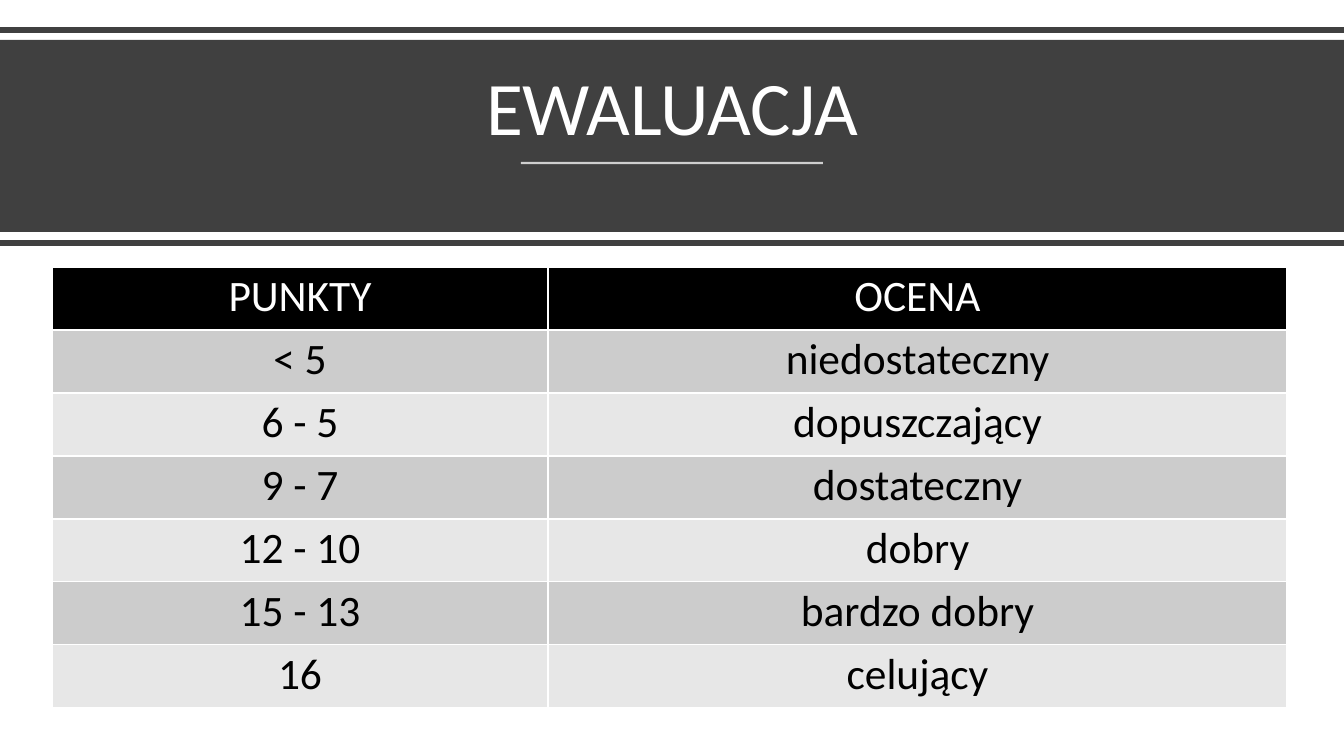
from lxml.etree import SubElement
from pptx import Presentation
from pptx.dml.color import RGBColor
from pptx.enum.shapes import MSO_CONNECTOR, MSO_SHAPE
from pptx.enum.text import MSO_ANCHOR, PP_ALIGN
from pptx.oxml import parse_xml
from pptx.oxml.ns import nsdecls, qn
from pptx.util import Pt

TITLE = "EWALUACJA"
GRADES = [
    ("PUNKTY", "OCENA"),
    ("< 5", "niedostateczny"),
    ("6 - 5", "dopuszczający"),
    ("9 - 7", "dostateczny"),
    ("12 - 10", "dobry"),
    ("15 - 13", "bardzo dobry"),
    ("16", "celujący"),
]

WHITE = RGBColor(0xFF, 0xFF, 0xFF)
BLACK = RGBColor(0x00, 0x00, 0x00)
CHARCOAL = RGBColor(0x40, 0x40, 0x40)
DARK_BAND = RGBColor(0xCC, 0xCC, 0xCC)
LIGHT_BAND = RGBColor(0xE7, 0xE7, 0xE7)

FONT = "Calibri"
EMU_PER_PX = 914400 / 100.8
PAGE_WIDTH, PAGE_HEIGHT = 1344, 756
TABLE_LEFT, TABLE_TOP = 52, 267
COLUMN_WIDTHS = (496, 739)
ROW_HEIGHT = 63
CELL_MARGIN = 20


def px(length):
    return round(length * EMU_PER_PX)


def write(frame, text, size, color, line_spacing, space_after=0):
    para = frame.paragraphs[0]
    para.alignment = PP_ALIGN.CENTER
    para.line_spacing = line_spacing
    para.space_after = Pt(space_after)
    span = para.add_run()
    span.text = text
    span.font.name = FONT
    span.font.size = Pt(size)
    span.font.color.rgb = color


def add_rule(page, left, right, y, color, weight, opacity=100):
    """Draw a horizontal line; opacity is a percentage."""
    rule = page.shapes.add_connector(
        MSO_CONNECTOR.STRAIGHT, px(left), px(y), px(right), px(y))
    rule.line.color.rgb = color
    rule.line.width = Pt(weight)
    properties = rule._element.spPr
    if opacity < 100:
        tint = properties.find(".//" + qn("a:srgbClr"))
        SubElement(tint, qn("a:alpha"), val=str(opacity * 1000))
    SubElement(properties, qn("a:effectLst"))


def add_borders(cell):
    properties = cell._tc.get_or_add_tcPr()
    for position, side in enumerate(("lnL", "lnR", "lnT", "lnB")):
        properties.insert(position, parse_xml(
            f'<a:{side} {nsdecls("a")} w="{Pt(1)}"><a:solidFill>'
            f'<a:srgbClr val="{WHITE}"/></a:solidFill></a:{side}>'))


def add_header(page):
    add_rule(page, 0, PAGE_WIDTH, 30, CHARCOAL, 4)
    band = page.shapes.add_shape(
        MSO_SHAPE.RECTANGLE, 0, px(40), px(PAGE_WIDTH), px(192))
    band.shadow.inherit = False
    band.fill.solid()
    band.fill.fore_color.rgb = CHARCOAL
    band.line.fill.background()

    box = page.shapes.add_textbox(px(58), px(54), px(1228), px(103))
    box.text_frame.word_wrap = True
    box.text_frame.vertical_anchor = MSO_ANCHOR.BOTTOM
    write(box.text_frame, TITLE, 54, WHITE, 0.9)

    add_rule(page, 521, 823, 163, WHITE, 1.5, opacity=75)
    add_rule(page, 0, PAGE_WIDTH, 243, CHARCOAL, 4)


def add_grades(page):
    table = page.shapes.add_table(
        len(GRADES), len(COLUMN_WIDTHS), px(TABLE_LEFT), px(TABLE_TOP),
        px(sum(COLUMN_WIDTHS)), px(ROW_HEIGHT * len(GRADES))).table
    for column, width in zip(table.columns, COLUMN_WIDTHS):
        column.width = px(width)
    for row_number, texts in enumerate(GRADES):
        table.rows[row_number].height = px(ROW_HEIGHT)
        if row_number == 0:
            fill, color = BLACK, WHITE
        else:
            fill, color = (DARK_BAND if row_number % 2 else LIGHT_BAND), BLACK
        for column_number, text in enumerate(texts):
            cell = table.cell(row_number, column_number)
            cell.margin_left = cell.margin_right = px(CELL_MARGIN)
            cell.margin_top = cell.margin_bottom = 0
            cell.fill.solid()
            cell.fill.fore_color.rgb = fill
            add_borders(cell)
            write(cell.text_frame, text, 31, color, 1.06, space_after=8)
            cell.text_frame.paragraphs[0].runs[0].font.bold = False


def main():
    deck = Presentation()
    deck.slide_width, deck.slide_height = px(PAGE_WIDTH), px(PAGE_HEIGHT)
    page = deck.slides.add_slide(deck.slide_layouts[6])
    add_header(page)
    add_grades(page)
    deck.save("out.pptx")


if __name__ == "__main__":
    main()
